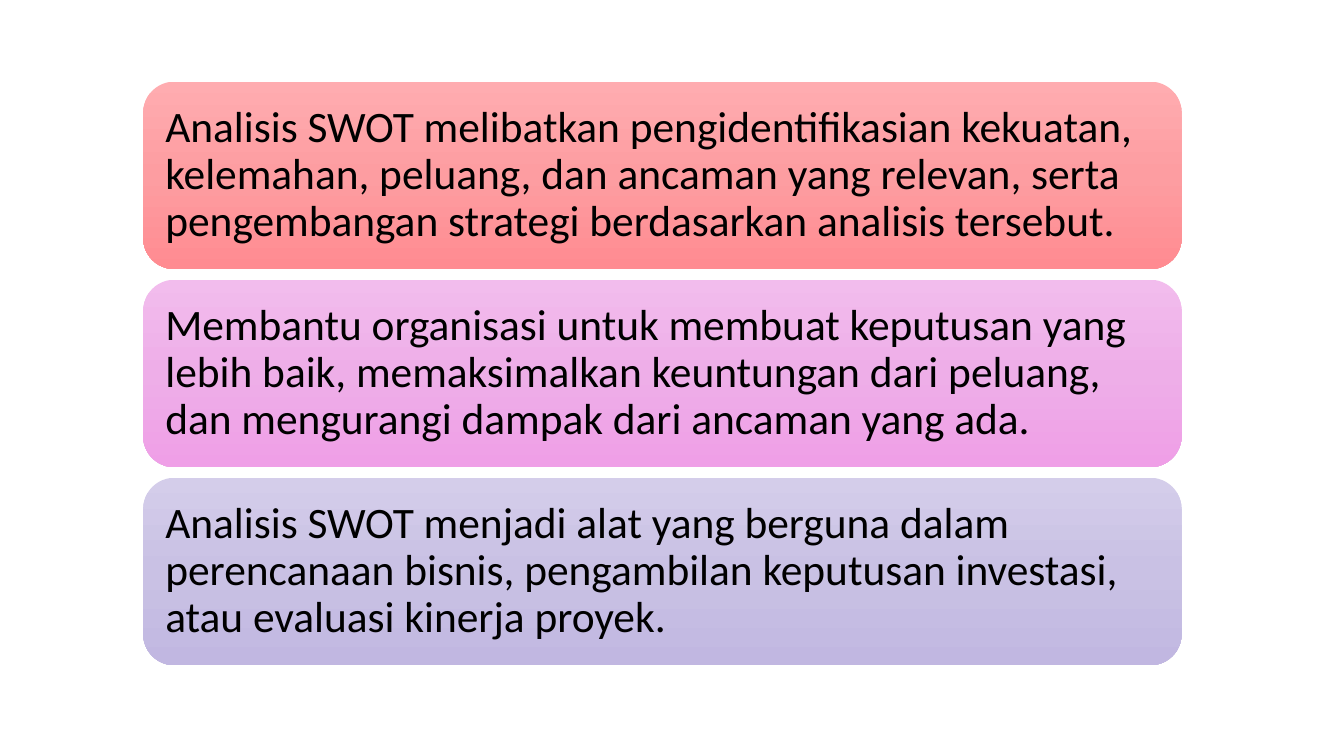
import copy
from dataclasses import dataclass

import pptx
import pptx.dml.color
import pptx.enum.shapes
import pptx.enum.text
import pptx.oxml.ns
import pptx.presentation
import pptx.slide
import pptx.text.text
import pptx.util


@dataclass(frozen=True)
class Theme:
    font: str = "Calibri"
    body_size: float = 31
    ink: str = "000000"
    rose: tuple[str, ...] = ("FFACB0", "FD9DA1", "FF8B91")
    orchid: tuple[str, ...] = ("F2BCED", "EEAEE8", "EF9FE7")
    lavender: tuple[str, ...] = ("D4CDEA", "C9C1E4", "C1B7E1")


@dataclass(frozen=True)
class Stack:
    """Equal rows in one column, in inches."""
    left: float = 1.42
    top: float = 0.81
    width: float = 10.3
    row_height: float = 1.86
    gap: float = 0.105

    def row_top(self, row: int) -> float:
        return self.top + row * (self.row_height + self.gap)


@dataclass(frozen=True)
class Conclusion:
    text: str
    shades: tuple[str, ...]


THEME = Theme()
STACK = Stack()
PADDING = pptx.util.Inches(0.13)

CONCLUSIONS = [
    Conclusion("Analisis SWOT melibatkan pengidentifikasian kekuatan, kelemahan, peluang, "
               "dan ancaman yang relevan, serta pengembangan strategi berdasarkan analisis "
               "tersebut.", THEME.rose),
    Conclusion("Membantu organisasi untuk membuat keputusan yang lebih baik, memaksimalkan "
               "keuntungan dari peluang, dan mengurangi dampak dari ancaman yang ada.",
               THEME.orchid),
    Conclusion("Analisis SWOT menjadi alat yang berguna dalam perencanaan bisnis, "
               "pengambilan keputusan investasi, atau evaluasi kinerja proyek.",
               THEME.lavender),
]


def write_text(frame: pptx.text.text.TextFrame, text: str, *, size: float, color: str,
               line_spacing: float) -> None:
    frame.word_wrap = True
    frame.vertical_anchor = pptx.enum.text.MSO_ANCHOR.MIDDLE
    frame.margin_left = frame.margin_right = PADDING
    frame.margin_top = frame.margin_bottom = PADDING
    paragraph = frame.paragraphs[0]
    paragraph.alignment = pptx.enum.text.PP_ALIGN.LEFT
    paragraph.line_spacing = line_spacing
    run = paragraph.add_run()
    run.text = text
    run.font.name = THEME.font
    run.font.size = pptx.util.Pt(size)
    run.font.color.rgb = pptx.dml.color.RGBColor.from_string(color)


def fill_downward(shape, shades: tuple[str, ...]) -> None:
    """Blend evenly spaced shades from top to bottom."""
    shape.fill.gradient()
    shape.fill.gradient_angle = 270
    stop_list = next(shape.element.iter(pptx.oxml.ns.qn("a:gsLst")))
    while len(stop_list) < len(shades):
        stop_list.append(copy.deepcopy(stop_list[0]))
    for index, (stop, shade) in enumerate(zip(shape.fill.gradient_stops, shades)):
        stop.position = index / (len(shades) - 1)
        stop.color.rgb = pptx.dml.color.RGBColor.from_string(shade)


def draw_conclusion(slide: pptx.slide.Slide, row: int, conclusion: Conclusion) -> None:
    panel = slide.shapes.add_shape(
        pptx.enum.shapes.MSO_SHAPE.ROUNDED_RECTANGLE,
        pptx.util.Inches(STACK.left), pptx.util.Inches(STACK.row_top(row)),
        pptx.util.Inches(STACK.width), pptx.util.Inches(STACK.row_height))
    panel.shadow.inherit = False
    panel.line.fill.background()
    fill_downward(panel, conclusion.shades)
    write_text(panel.text_frame, conclusion.text, size=THEME.body_size,
               color=THEME.ink, line_spacing=0.9)


def main() -> None:
    presentation = pptx.Presentation()
    presentation.slide_width = pptx.util.Inches(13.33)
    presentation.slide_height = pptx.util.Inches(7.5)
    blank_layout = presentation.slide_layouts[6]
    slide = presentation.slides.add_slide(blank_layout)
    for row, conclusion in enumerate(CONCLUSIONS):
        draw_conclusion(slide, row, conclusion)
    presentation.save("out.pptx")


if __name__ == "__main__":
    main()
